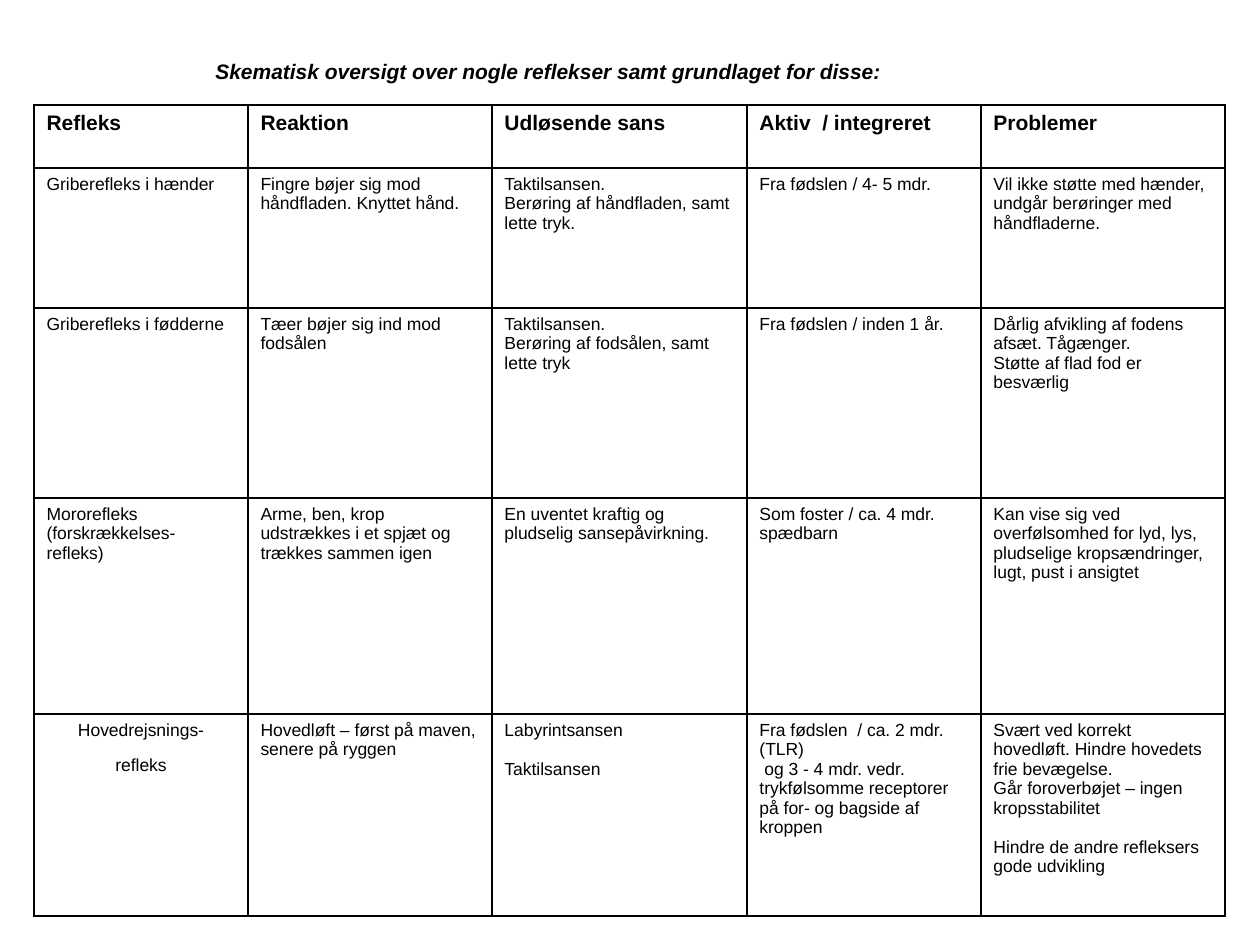
"""Build a one-slide table of infant reflexes and the senses behind them."""
import pptx
import pptx.dml.color
import pptx.enum.text
import pptx.oxml
import pptx.oxml.ns
import pptx.util

PX = 914400 // 126
COLORS = {"ink": "000000"}
ALIGN = pptx.enum.text.PP_ALIGN
TITLE = "Skematisk oversigt over nogle reflekser samt grundlaget for disse:"
COLS = [214, 244, 255, 234, 244]
ROWS = [63, 140, 190, 216, 202]
CELLS = [
    ["Refleks", "Reaktion", "Udløsende sans", "Aktiv  / integreret", "Problemer"],
    ["Griberefleks i hænder",
     "Fingre bøjer sig mod håndfladen. Knyttet hånd.",
     "Taktilsansen.\nBerøring af håndfladen, samt lette tryk.",
     "Fra fødslen / 4- 5 mdr.",
     "Vil ikke støtte med hænder, undgår berøringer med håndfladerne."],
    ["Griberefleks i fødderne",
     "Tæer bøjer sig ind mod fodsålen",
     "Taktilsansen.\nBerøring af fodsålen, samt lette tryk",
     "Fra fødslen / inden 1 år.",
     "Dårlig afvikling af fodens afsæt. Tågænger.\nStøtte af flad fod er besværlig"],
    ["Mororefleks\n(forskrækkelses-\nrefleks)",
     "Arme, ben, krop udstrækkes i et spjæt og trækkes sammen igen",
     "En uventet kraftig og pludselig sansepåvirkning.",
     "Som foster / ca. 4 mdr. spædbarn",
     "Kan vise sig ved overfølsomhed for lyd, lys, pludselige kropsændringer, "
     "lugt, pust i ansigtet"],
    ["Hovedrejsnings-\n\nrefleks",
     "Hovedløft – først på maven, senere på ryggen",
     "Labyrintsansen\n\nTaktilsansen",
     "Fra fødslen  / ca. 2 mdr. (TLR)\n og 3 - 4 mdr. vedr. trykfølsomme "
     "receptorer på for- og bagside af kroppen",
     "Svært ved korrekt hovedløft. Hindre hovedets frie bevægelse.\n"
     "Går foroverbøjet – ingen kropsstabilitet\n\n"
     "Hindre de andre refleksers gode udvikling"],
]


class Deck:
    """Hold the style and the current slide."""

    def __init__(self, width, height, font="Arial"):
        self.prs = pptx.Presentation()
        self.prs.slide_width, self.prs.slide_height = width * PX, height * PX
        self.font = font
        self.s = self.prs.slides.add_slide(self.prs.slide_layouts[6])

    def add_lines(self, tf, text, size, bold=False, italic=False, align=ALIGN.LEFT, gap=11.2):
        """Add one paragraph per line; an empty line becomes space before the next."""
        p, space = tf.paragraphs[0], 0
        for i, line in enumerate(text.split("\n")):
            if not line:
                space = gap
                continue
            if i:
                p = tf.add_paragraph()
            p.alignment = align
            p.space_before = pptx.util.Pt(space)
            space = 0
            r = p.add_run()
            r.text = line
            r.font.name, r.font.size = self.font, pptx.util.Pt(size)
            r.font.bold, r.font.italic = bold, italic
            r.font.color.rgb = pptx.dml.color.RGBColor.from_string(COLORS["ink"])

    def text(self, x, y, w, h, text, size, **style):
        """Add a middle-anchored, single-line text box."""
        tf = self.s.shapes.add_textbox(x * PX, y * PX, w * PX, h * PX).text_frame
        tf.word_wrap = False
        tf.vertical_anchor = pptx.enum.text.MSO_ANCHOR.MIDDLE
        self.add_lines(tf, text, size, **style)

    def border(self, cell, width=1):
        """Draw a solid line on all four sides of a cell."""
        tc_pr = cell._tc.get_or_add_tcPr()
        for side in ("lnL", "lnR", "lnT", "lnB"):
            tc_pr.append(pptx.oxml.parse_xml(
                f'<a:{side} {pptx.oxml.ns.nsdecls("a")} w="{pptx.util.Pt(width)}">'
                f'<a:solidFill><a:srgbClr val="{COLORS["ink"]}"/></a:solidFill></a:{side}>'))

    def table(self, x, y, cols, rows, cells):
        """Add a ruled table with a bold header and a centred last row label."""
        tbl = self.s.shapes.add_table(
            len(rows), len(cols), x * PX, y * PX, sum(cols) * PX, sum(rows) * PX).table
        tbl.first_row = tbl.horz_banding = False
        for col, w in zip(tbl.columns, cols):
            col.width = w * PX
        for i, (row, h, texts) in enumerate(zip(tbl.rows, rows, cells)):
            row.height = h * PX
            for j, (cell, text) in enumerate(zip(row.cells, texts)):
                self.border(cell)
                cell.fill.background()
                style = {"size": 10}
                if i == 0:
                    style = {"size": 12, "bold": True}
                elif i == len(rows) - 1 and j == 0:
                    style.update(align=ALIGN.CENTER, gap=9)
                self.add_lines(cell.text_frame, text, **style)


def main():
    deck = Deck(1260, 945)
    deck.text(203, 52, 692, 38, TITLE, 12, bold=True, italic=True)
    deck.table(34, 105, COLS, ROWS, CELLS)
    deck.prs.save("out.pptx")


if __name__ == "__main__":
    main()
